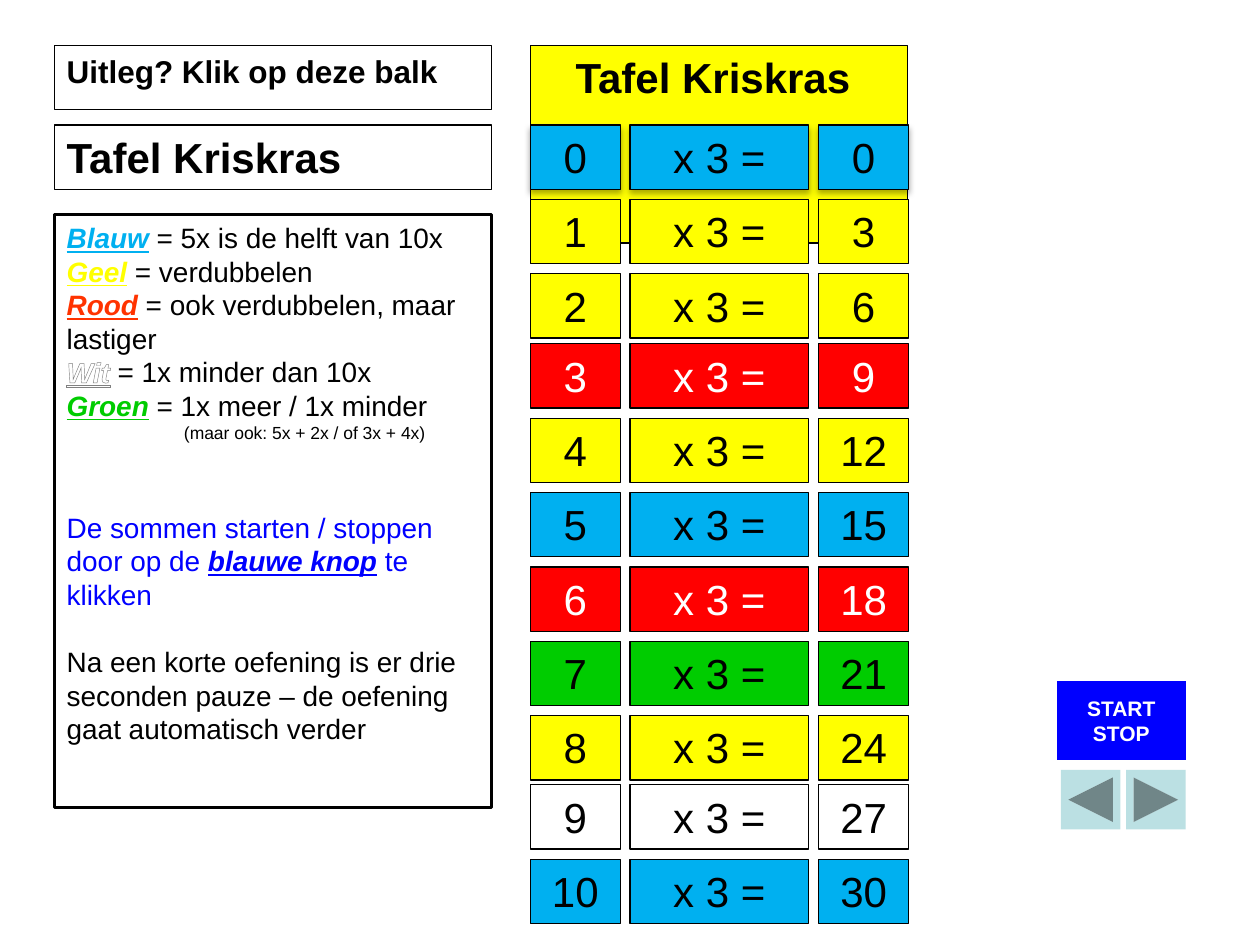
from lxml.etree import SubElement
from pptx import Presentation
from pptx.dml.color import RGBColor
from pptx.enum.shapes import MSO_SHAPE
from pptx.enum.text import MSO_ANCHOR, MSO_AUTO_SIZE, PP_ALIGN
from pptx.oxml import parse_xml
from pptx.oxml.ns import nsdecls, qn
from pptx.util import Pt

BLACK = RGBColor(0x00, 0x00, 0x00)
WHITE = RGBColor(0xFF, 0xFF, 0xFF)
SKY = RGBColor(0x00, 0xB0, 0xF0)
YELLOW = RGBColor(0xFF, 0xFF, 0x00)
RED = RGBColor(0xFF, 0x00, 0x00)
ORANGE_RED = RGBColor(0xFF, 0x33, 0x00)
GREEN = RGBColor(0x00, 0xCC, 0x00)
BLUE = RGBColor(0x00, 0x00, 0xFF)
PALE_TEAL = RGBColor(0xBB, 0xE0, 0xE3)

FACTOR = 3
ROW_COLORS = [SKY, YELLOW, YELLOW, RED, YELLOW, SKY, RED, GREEN, YELLOW, WHITE, SKY]
ROW_STEP = 42.5
BLOCK_TOPS = {0: 71.5, 3: 196.5, 9: 448.5}  # first row of each block of rows
BAR_HEIGHT = 36.75
BAR_TOP = 26
LEFT_X, LEFT_WIDTH = 31, 250
TABLE_X, TABLE_WIDTH = 303, 215.5
COLUMNS = [(303, 51.5), (360, 102), (467.75, 51.5)]  # left, width


def add_run(paragraph, text, size, color, bold=False, emphasis=False):
    run = paragraph.add_run()
    run.text = text
    font = run.font
    font.name, font.size = "Arial", Pt(size)
    font.color.rgb = color
    font.bold = bold or emphasis
    if emphasis:
        font.italic = font.underline = True
    return run


def outline_run(run):
    """Draw the letters with a thin grey outline."""
    run.font.fill.solid()
    run.font.fill.fore_color.rgb = WHITE
    run.font._element.insert(0, parse_xml(
        f'<a:ln {nsdecls("a")} w="12700"><a:solidFill>'
        '<a:srgbClr val="808080"/></a:solidFill></a:ln>'))


def add_shadow(shape):
    effects = shape._element.spPr.find(qn("a:effectLst"))
    shadow = SubElement(effects, qn("a:outerShdw"), blurRad="44450",
                        dist="27940", dir="5400000", algn="ctr")
    color = SubElement(shadow, qn("a:srgbClr"), val="000000")
    SubElement(color, qn("a:alpha"), val="32000")


def add_box(slide, left, top, width, height, fill=None, line=None,
            kind=MSO_SHAPE.RECTANGLE):
    shape = slide.shapes.add_shape(kind, Pt(left), Pt(top), Pt(width), Pt(height))
    shape.shadow.inherit = False
    format_box(shape, fill, line)
    return shape


def format_box(shape, fill, line):
    if fill is None:
        shape.fill.background()
    else:
        shape.fill.solid()
        shape.fill.fore_color.rgb = fill
    if line is None:
        shape.line.fill.background()
    else:
        shape.line.color.rgb = BLACK
        shape.line.width = Pt(line)


def write_bar(shape, text, size=24, color=BLACK, bold=False,
              align=PP_ALIGN.CENTER, grow=True):
    """One line of text, with half a line of space before it."""
    frame = shape.text_frame
    frame.word_wrap = True
    frame.vertical_anchor = MSO_ANCHOR.TOP
    frame.auto_size = MSO_AUTO_SIZE.SHAPE_TO_FIT_TEXT if grow else MSO_AUTO_SIZE.NONE
    paragraph = frame.paragraphs[0]
    paragraph.alignment = align
    properties = paragraph._p.get_or_add_pPr()
    before = SubElement(properties, qn("a:spcBef"))
    SubElement(before, qn("a:spcPct"), val="50000")
    add_run(paragraph, text, size, color, bold)


def add_title(slide):
    title = slide.shapes.title
    title.left, title.top = Pt(TABLE_X), Pt(BAR_TOP)
    title.width, title.height = Pt(TABLE_WIDTH), Pt(BAR_HEIGHT)
    format_box(title, YELLOW, 0.75)
    write_bar(title, "Tafel Kriskras ", bold=True)


def add_sums(slide):
    for number, fill in enumerate(ROW_COLORS):
        first = max(row for row in BLOCK_TOPS if row <= number)
        top = BLOCK_TOPS[first] + (number - first) * ROW_STEP
        texts = [str(number), f"x {FACTOR} =", str(number * FACTOR)]
        for (left, width), text in zip(COLUMNS, texts):
            cell = add_box(slide, left, top, width, BAR_HEIGHT, fill, 0.75)
            write_bar(cell, text, color=WHITE if fill == RED else BLACK)
            if number == 0:
                add_shadow(cell)


def add_explanation(slide):
    box = add_box(slide, LEFT_X, 122.5, LEFT_WIDTH, 339, WHITE, 1.5)
    frame = box.text_frame
    frame.word_wrap = True
    frame.vertical_anchor = MSO_ANCHOR.TOP

    def next_paragraph(before=0):
        paragraph = frame.add_paragraph() if frame.text else frame.paragraphs[0]
        paragraph.alignment = PP_ALIGN.LEFT
        paragraph.space_before = Pt(before)
        return paragraph

    # Colour key
    for word, color, meaning in [
            ("Blauw", SKY, "5x is de helft van 10x"),
            ("Geel", YELLOW, "verdubbelen"),
            ("Rood", ORANGE_RED, "ook verdubbelen, maar lastiger"),
            ("Wit", WHITE, "1x minder dan 10x"),
            ("Groen", GREEN, "1x meer / 1x minder")]:
        paragraph = next_paragraph()
        run = add_run(paragraph, word, 16, color, emphasis=True)
        if color == WHITE:
            outline_run(run)
        add_run(paragraph, f" = {meaning}", 16, BLACK)

    paragraph = next_paragraph()
    paragraph._p.get_or_add_pPr().set("marL", str(Pt(67)))
    add_run(paragraph, "(maar ook: 5x + 2x / of 3x + 4x)", 10, BLACK)

    # How the exercise works
    paragraph = next_paragraph(before=38.4)
    add_run(paragraph, "De sommen starten / stoppen door op de ", 16, BLUE)
    add_run(paragraph, "blauwe knop", 16, BLUE, emphasis=True)
    add_run(paragraph, " te klikken", 16, BLUE)
    paragraph = next_paragraph(before=19.2)
    add_run(paragraph, "Na een korte oefening is er drie seconden pauze – "
            "de oefening gaat automatisch verder", 16, BLACK)


def add_left_bars(slide):
    for top, text, size, grow in [(71.5, "Tafel Kriskras", 24, True),
                                  (BAR_TOP, "Uitleg? Klik op deze balk", 18, False)]:
        bar = add_box(slide, LEFT_X, top, LEFT_WIDTH, BAR_HEIGHT, line=0.75)
        write_bar(bar, text, size, bold=True, align=PP_ALIGN.LEFT, grow=grow)


def add_buttons(slide):
    for left, kind in [(643.5, MSO_SHAPE.ACTION_BUTTON_FORWARD_OR_NEXT),
                       (606.25, MSO_SHAPE.ACTION_BUTTON_BACK_OR_PREVIOUS)]:
        add_box(slide, left, 440, 34, 34, PALE_TEAL, kind=kind)
    button = add_box(slide, 604, 389, 73.5, 45.25, BLUE,
                     kind=MSO_SHAPE.ACTION_BUTTON_CUSTOM)
    frame = button.text_frame
    frame.word_wrap = False
    frame.vertical_anchor = MSO_ANCHOR.MIDDLE
    for paragraph, text in [(frame.paragraphs[0], "START"),
                            (frame.add_paragraph(), "STOP")]:
        paragraph.alignment = PP_ALIGN.CENTER
        add_run(paragraph, text, 12, WHITE, bold=True)


def main():
    presentation = Presentation()
    presentation.slide_width, presentation.slide_height = Pt(720), Pt(540)
    slide = presentation.slides.add_slide(presentation.slide_layouts[5])
    add_title(slide)
    add_sums(slide)
    add_explanation(slide)
    add_left_bars(slide)
    add_buttons(slide)
    presentation.save("out.pptx")


if __name__ == "__main__":
    main()
